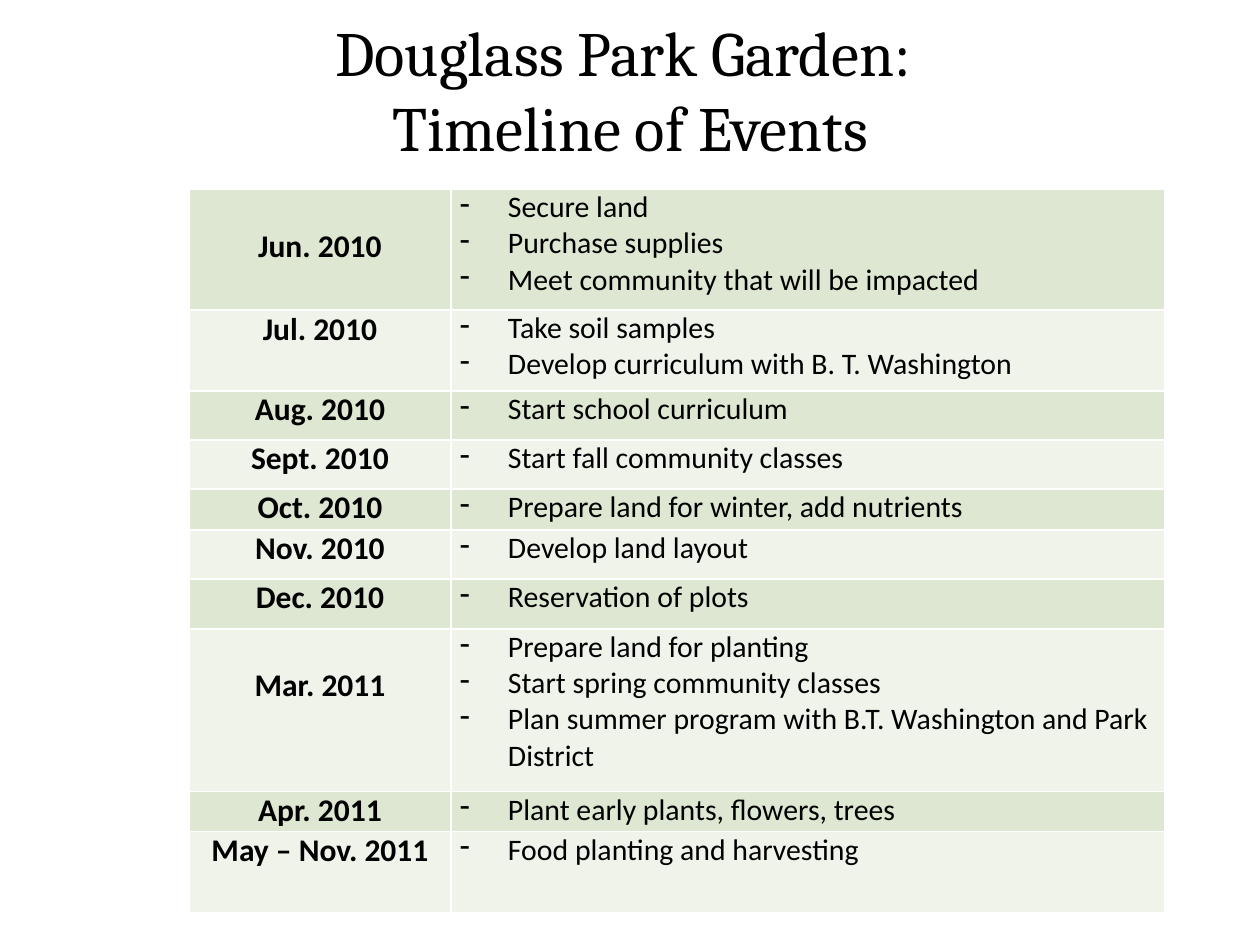
from pptx import Presentation
from pptx.dml.color import RGBColor
from pptx.enum.text import MSO_ANCHOR as Anchor, PP_ALIGN as Align
from pptx.oxml.ns import qn
from pptx.util import Pt
from lxml.etree import SubElement

BLACK = RGBColor(0x00, 0x00, 0x00)
WHITE = RGBColor(0xFF, 0xFF, 0xFF)
BANDS = RGBColor(0xDE, 0xE7, 0xD1), RGBColor(0xEF, 0xF3, 0xEA)
TITLE_LINES = ["Douglass Park Garden: ", "Timeline of Events"]
COLUMN_WIDTHS = [262, 714]
DATE_DROP = 38
EVENTS = [
    ("Jun. 2010", 121, DATE_DROP,
     ["Secure land", "Purchase supplies", "Meet community that will be impacted"]),
    ("Jul. 2010", 81, 0, ["Take soil samples", "Develop curriculum with B. T. Washington"]),
    ("Aug. 2010", 49, 0, ["Start school curriculum"]),
    ("Sept. 2010", 49, 0, ["Start fall community classes"]),
    ("Oct. 2010", 41, 0, ["Prepare land for winter, add nutrients"]),
    ("Nov. 2010", 49, 0, ["Develop land layout"]),
    ("Dec. 2010", 50, 0, ["Reservation of plots"]),
    ("Mar. 2011", 163, DATE_DROP,
     ["Prepare land for planting", "Start spring community classes",
      "Plan summer program with B.T. Washington and Park District"]),
    ("Apr. 2011", 40, 0, ["Plant early plants, flowers, trees"]),
    ("May – Nov. 2011", 81, 0, ["Food planting and harvesting"]),
]


def px(length):
    return round(length * 914400 / 126)


class TimelineSlide:
    heading_font = "Cambria"
    body_font = "Calibri"

    def __init__(self, deck):
        self.page = deck.slides.add_slide(deck.slide_layouts[5])

    def add_span(self, para, text, font, size, bold=False):
        span = para.add_run()
        span.text = text
        span.font.name = font
        span.font.size = Pt(size)
        span.font.bold = bold
        span.font.color.rgb = BLACK

    def add_title(self, lines, left, top, width, height):
        box = self.page.shapes.title
        box.left, box.top, box.width, box.height = map(px, (left, top, width, height))
        box.text_frame.vertical_anchor = Anchor.MIDDLE
        para = box.text_frame.paragraphs[0]
        para.alignment = Align.CENTER
        for index, line in enumerate(lines):
            if index:
                para.add_line_break()
            self.add_span(para, line, self.heading_font, 36)

    def style_cell(self, cell, fill, top_margin=0):
        cell.margin_left = cell.margin_right = px(9)
        cell.margin_top, cell.margin_bottom = px(top_margin), 0
        properties = cell._tc.get_or_add_tcPr()
        for side in ("a:lnL", "a:lnR", "a:lnT", "a:lnB"):
            border = SubElement(properties, qn(side), w=str(Pt(1)))
            solid = SubElement(border, qn("a:solidFill"))
            SubElement(solid, qn("a:srgbClr"), val=str(WHITE))
        cell.fill.solid()
        cell.fill.fore_color.rgb = fill

    def add_date(self, cell, date):
        para = cell.text_frame.paragraphs[0]
        para.alignment = Align.CENTER
        self.add_span(para, date, self.body_font, 18, bold=True)

    def add_tasks(self, cell, tasks):
        frame = cell.text_frame
        for index, task in enumerate(tasks):
            para = frame.add_paragraph() if index else frame.paragraphs[0]
            properties = para._p.get_or_add_pPr()
            properties.set("marL", str(px(48)))
            properties.set("indent", str(-px(48)))
            SubElement(properties, qn("a:buChar"), char="-")
            self.add_span(para, task, self.body_font, 17)

    def add_timeline(self, events, left, top):
        width = sum(COLUMN_WIDTHS)
        height = sum(event[1] for event in events)
        table = self.page.shapes.add_table(
            len(events), len(COLUMN_WIDTHS), *map(px, (left, top, width, height))).table
        table.first_row = table.horz_banding = False
        for column, column_width in zip(table.columns, COLUMN_WIDTHS):
            column.width = px(column_width)
        for index, (date, row_height, drop, tasks) in enumerate(events):
            table.rows[index].height = px(row_height)
            date_cell, task_cell = table.rows[index].cells
            fill = BANDS[index % 2]
            self.style_cell(date_cell, fill, drop)
            self.style_cell(task_cell, fill)
            self.add_date(date_cell, date)
            self.add_tasks(task_cell, tasks)


def main():
    deck = Presentation()
    deck.slide_width, deck.slide_height = px(1260), px(945)
    slide = TimelineSlide(deck)
    slide.add_timeline(EVENTS, 189, 189)
    slide.add_title(TITLE_LINES, 63, 10, 1134, 158)
    deck.save("out.pptx")


if __name__ == "__main__":
    main()
